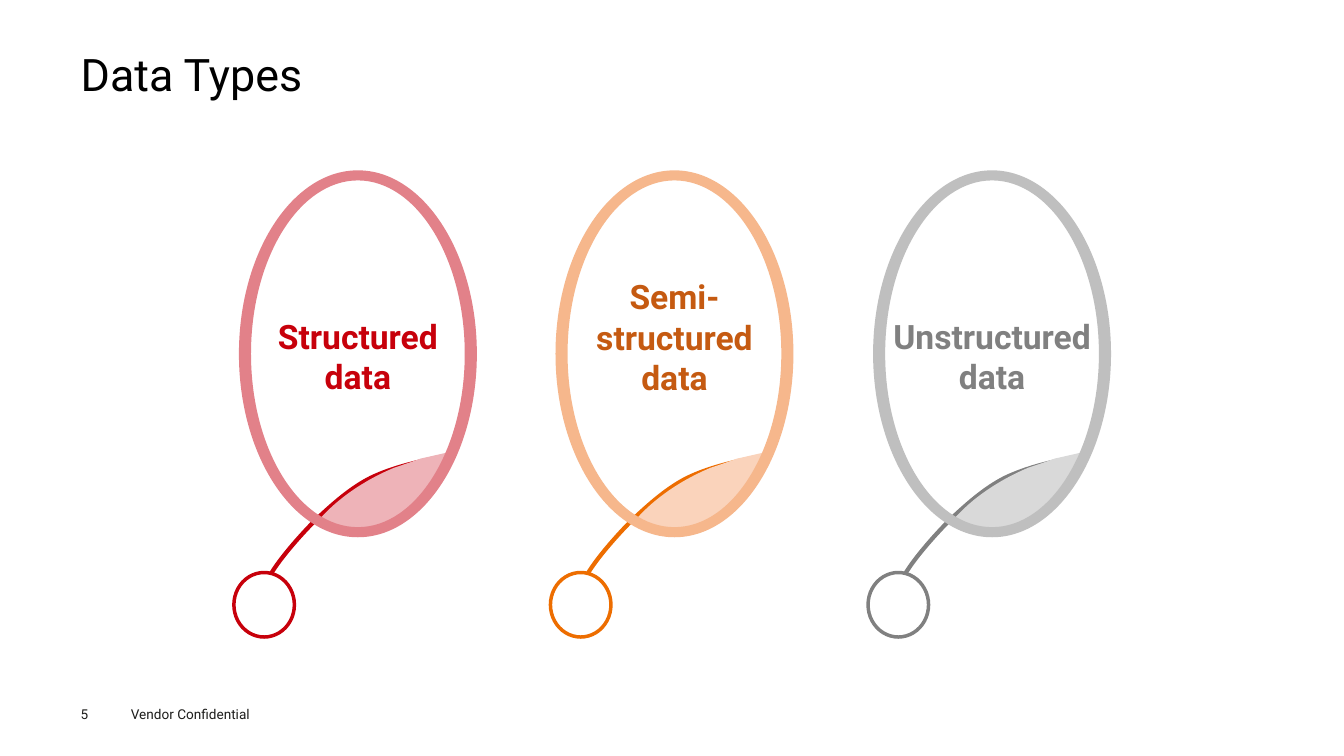
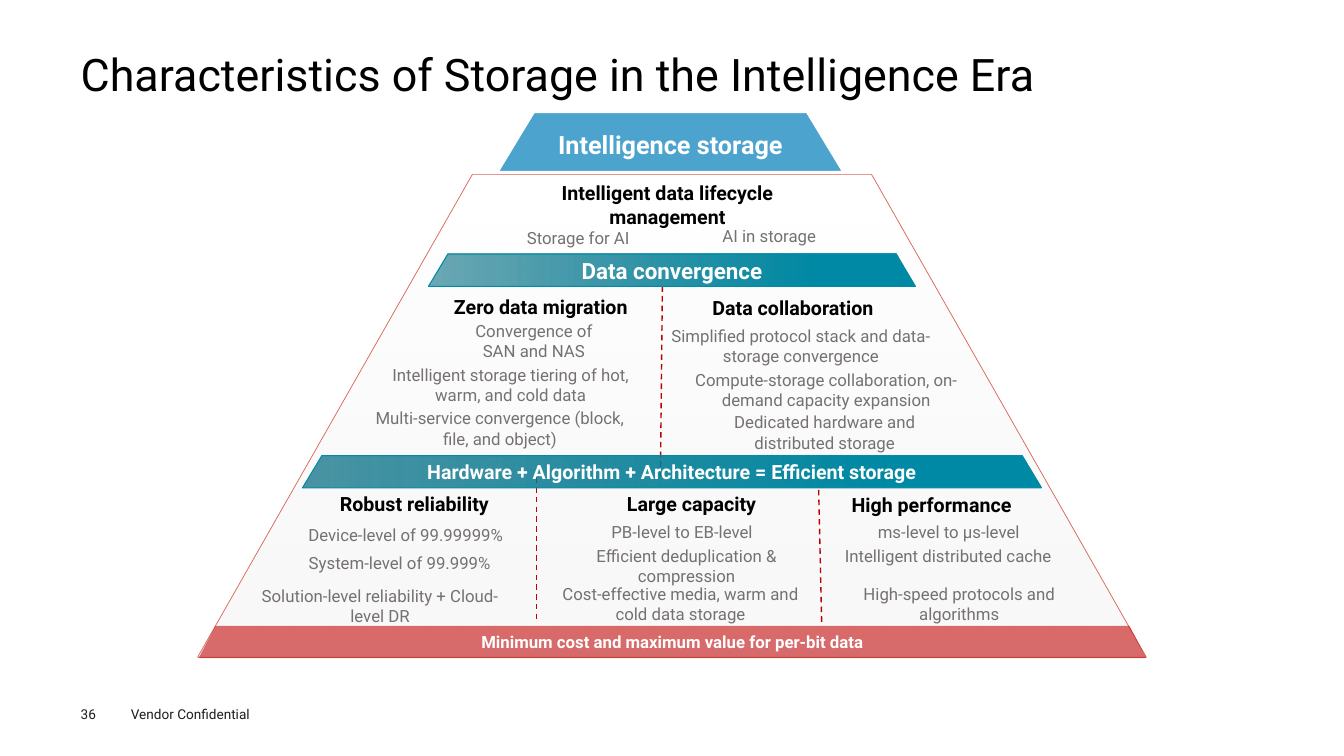
from pptx import Presentation
from pptx.dml.color import RGBColor
from pptx.enum.dml import MSO_LINE
from pptx.enum.shapes import MSO_CONNECTOR as Connector, MSO_SHAPE as Shape
from pptx.enum.text import MSO_ANCHOR as Anchor, MSO_AUTO_SIZE as AutoSize, PP_ALIGN as Align
from pptx.oxml import parse_xml
from pptx.oxml.ns import nsdecls, qn
from pptx.util import Inches, Pt

# Shared style
FONT = "Roboto"
BLACK, WHITE, FOOTER_INK = "000000", "FFFFFF", "1D1D1B"
DETAIL_GREY, DIVIDER_RED = "767171", "C00000"
TEAL, TEAL_DARK, TEAL_LINE = "008AA5", "006A7F", "008BA6"
TITLE_AREA = (0.8, 0.49, 11.73, 0.54)
FOOTER_TEXT = "Vendor Confidential"
NO_INSETS = (0, 0, 0, 0)
BOX_INSETS = (0.1, 0.05, 0.1, 0.05)
BAND_INSETS = (0.18, 0.09, 0.18, 0.09)

# Data type balloons: offset, label, label colour, ring, leaf, stalk, top inset
BALLOONS = [
    (0, "Structured data", "C7000B", "E28189", "EEB3B8", "C7000B", 0.44),
    (3.14, "Semi-structured data", "C55A11", "F6B78C", "FAD3BB", "ED6D00", 0.05),
    (6.29, "Unstructured data", "808080", "BFBFBF", "D9D9D9", "808080", 0.44),
]
# Outlines: a start, then segments of one point (line) or three (curve)
STALK = [(4.34, 4.54),
         [(4.11, 4.59), (3.89, 4.64), (3.68, 4.74)],
         [(3.48, 4.84), (3.3, 5), (3.13, 5.16)],
         [(2.97, 5.32), (2.78, 5.54), (2.69, 5.69)],
         [(2.61, 5.84), (2.62, 5.95), (2.64, 6.07)]]
LEAF = [(4.48, 4.48),
        [(4.45, 4.53)],
        [(4.32, 5), (3.77, 5.33), (3.53, 5.32)],
        [(3.38, 5.32), (3.3, 5.29), (3.19, 5.22)],
        [(3.14, 5.18)],
        [(3.18, 5.14)],
        [(3.35, 4.95), (3.6, 4.77), (3.91, 4.64)],
        [(4, 4.61), (4.09, 4.58), (4.17, 4.55)],
        [(4.22, 4.54), (4.43, 4.49), (4.48, 4.48)]]

# Pyramid texts: text, left, top, width
HEADINGS = [
    ("Intelligent data lifecycle management", 5.2, 1.75, 2.84),
    ("Zero data migration", 4.13, 2.88, 2.47),
    ("Data collaboration", 6.52, 2.89, 2.69),
    ("Robust reliability", 2.93, 4.83, 2.36),
    ("Large capacity", 5.58, 4.83, 2.56),
    ("High performance", 8.06, 4.84, 2.36),
]
DETAILS = [
    ("Storage for AI", 4.96, 2.21, 1.55),
    ("AI in storage", 6.89, 2.19, 1.48),
    ("Convergence of SAN and NAS", 4.49, 3.13, 1.61),
    ("Intelligent storage tiering of hot, warm, and cold data", 3.72, 3.57, 2.69),
    ("Multi-service convergence (block, file, and object)", 3.61, 4, 2.7),
    ("Simplified protocol stack and data-storage convergence", 6.51, 3.18, 2.87),
    ("Compute-storage collaboration, on-demand capacity expansion", 6.7, 3.62, 2.99),
    ("Dedicated hardware and distributed storage", 6.9, 4.04, 2.56),
    ("Device-level of 99.99999%", 2.71, 5.16, 2.63),
    ("System-level of 99.999%", 2.73, 5.43, 2.47),
    ("Solution-level reliability + Cloud-level DR", 2.39, 5.76, 2.76),
    ("PB-level to EB-level", 5.73, 5.13, 2.07),
    ("Efficient deduplication & compression", 5.69, 5.36, 2.24),
    ("Cost-effective media, warm and cold data storage", 5.4, 5.74, 2.7),
    ("ms-level to µs-level", 8.45, 5.13, 1.92),
    ("Intelligent distributed cache", 8.24, 5.36, 2.33),
    ("High-speed protocols and algorithms", 8.45, 5.74, 2.13),
]
DIVIDERS = [(8.12, 4.86, 8.15, 6.2), (5.32, 4.64, 5.32, 6.17), (6.57, 2.84, 6.55, 4.73)]


# Formatting helpers
def rgb(value):
    return RGBColor.from_string(value)


def inches(values):
    return [Inches(value) for value in values]


def set_values(target, values):
    for name, value in values.items():
        setattr(target, name, value)


def write(frame, text, size, color, bold=False, align=Align.LEFT,
          anchor=Anchor.TOP, insets=BOX_INSETS):
    left, top, right, bottom = inches(insets)
    set_values(frame, {
        "word_wrap": True, "auto_size": AutoSize.NONE, "vertical_anchor": anchor,
        "margin_left": left, "margin_top": top,
        "margin_right": right, "margin_bottom": bottom})
    para = frame.paragraphs[0]
    para.alignment = align
    span = para.add_run()
    span.text = text
    set_values(span.font, {"name": FONT, "size": Pt(size), "bold": bold})
    span.font.color.rgb = rgb(color)
    return para


def style(shape, fill=None, line=None, width=1):
    shape.shadow.inherit = False
    if fill:
        shape.fill.solid()
        shape.fill.fore_color.rgb = rgb(fill)
    else:
        shape.fill.background()
    if line:
        shape.line.color.rgb = rgb(line)
        shape.line.width = Pt(width)
    else:
        shape.line.fill.background()


def color_xml(color, alpha):
    return f'<a:srgbClr val="{color}"><a:alpha val="{alpha * 1000}"/></a:srgbClr>'


def replace_fill(shape, xml):
    properties = shape._element.spPr
    properties.replace(properties.find(qn("a:noFill")), parse_xml(xml))


def fill_transparent(shape, color, alpha):
    replace_fill(shape, f'<a:solidFill {nsdecls("a")}>{color_xml(color, alpha)}</a:solidFill>')


def fill_gradient(shape, stops, angle):
    stop_xml = "".join(f'<a:gs pos="{place * 1000}">{color_xml(color, alpha)}</a:gs>'
                       for place, color, alpha in stops)
    replace_fill(shape, f'<a:gradFill {nsdecls("a")} rotWithShape="1"><a:gsLst>{stop_xml}</a:gsLst>'
                        f'<a:lin ang="{angle * 60000}" scaled="0"/></a:gradFill>')


# Outlines
def ellipse(radius_x, radius_y, direction=1):
    """Four quarter curves, from the top; direction -1 runs the other way."""
    bend = 0.55
    units = [[(bend, -1), (1, -bend), (1, 0)], [(1, bend), (bend, 1), (0, 1)],
             [(-bend, 1), (-1, bend), (-1, 0)], [(-1, -bend), (-bend, -1), (0, -1)]]
    center_x, center_y = 3.55, 3.51
    quarters = [[(center_x + direction * radius_x * x, center_y + radius_y * y) for x, y in quarter]
                for quarter in units]
    return [(center_x, center_y - radius_y), *quarters]


def bend_segments(shape, contours):
    """Turn each three-point segment into one Bezier curve."""
    lines = iter(shape._element.findall(".//" + qn("a:lnTo")))
    for contour in contours:
        for segment in contour[1:]:
            corners = [next(lines) for _ in segment]
            if len(corners) == 1:
                continue
            curve = parse_xml(f'<a:cubicBezTo {nsdecls("a")}/>')
            corners[0].addprevious(curve)
            for corner in corners:
                curve.append(corner[0])
                corner.getparent().remove(corner)


def add_outline(page, contours, offset, close=True):
    builder = None
    for start, *segments in contours:
        points = [start] + [point for segment in segments for point in segment]
        first, *rest = [(Inches(x + offset), Inches(y)) for x, y in points]
        if builder is None:
            builder = page.shapes.build_freeform(*first, scale=1.0)
        else:
            builder.move_to(*first)
        builder.add_line_segments(rest, close=close)
    shape = builder.convert_to_shape()
    bend_segments(shape, contours)
    return shape


# Slide elements
def add_text(page, area, text, size, color, **options):
    box = page.shapes.add_textbox(*inches(area))
    write(box.text_frame, text, size, color, **options)


def add_page(deck, title, number):
    page = deck.slides.add_slide(deck.slide_layouts[5])
    heading = page.shapes.title
    set_values(heading, dict(zip(("left", "top", "width", "height"), inches(TITLE_AREA))))
    para = write(heading.text_frame, title, 32, BLACK, anchor=Anchor.MIDDLE, insets=NO_INSETS)
    para.line_spacing = 0.9
    add_text(page, (1.2, 6.95, 1.6, 0.27), FOOTER_TEXT, 9.7, FOOTER_INK)
    add_text(page, (0.8, 7, 0.55, 0.16), number, 9.7, FOOTER_INK, insets=NO_INSETS)
    return page


def add_balloon(page, offset, label, label_color, ring_color, leaf_color, stalk_color, top_inset):
    stalk = add_outline(page, [STALK], offset, close=False)
    style(stalk, line=stalk_color, width=3)
    leaf = add_outline(page, [LEAF], offset)
    style(leaf, leaf_color)
    ring = add_outline(page, [ellipse(1.18, 1.82), ellipse(1.06, 1.72, -1)], offset)
    style(ring, ring_color)
    write(ring.text_frame, label, 24, label_color, bold=True, align=Align.CENTER,
          anchor=Anchor.MIDDLE, insets=(0.1, top_inset, 0.1, 0.39))
    knob = page.shapes.add_shape(Shape.OVAL, *inches((2.32 + offset, 5.68, 0.6, 0.64)))
    style(knob, WHITE, stalk_color, 2.5)


def add_trapezoid(page, area, slant, line=None, width=1, text=None, size=12, insets=BAND_INSETS):
    shape = page.shapes.add_shape(Shape.TRAPEZOID, *inches(area))
    shape.adjustments[0] = slant
    style(shape, line=line, width=width)
    if text:
        write(shape.text_frame, text, size, WHITE, bold=True, align=Align.CENTER,
              anchor=Anchor.MIDDLE, insets=insets)
    return shape


def add_teal_band(page, area, text, size, alpha):
    band = add_trapezoid(page, area, 0.604, TEAL_LINE, 0.75, text, size)
    fill_gradient(band, [(0, TEAL_DARK, alpha), (80, TEAL, 100), (100, TEAL, 100)], 0)


def add_divider(page, ends):
    divider = page.shapes.add_connector(Connector.STRAIGHT, *inches(ends))
    divider.line.color.rgb = rgb(DIVIDER_RED)
    set_values(divider.line, {"width": Pt(1), "dash_style": MSO_LINE.DASH})
    divider._element.spPr.append(parse_xml(f'<a:effectLst {nsdecls("a")}/>'))


# Slides
def build_data_types(deck):
    page = add_page(deck, "Data Types", "5")
    for balloon in BALLOONS:
        add_balloon(page, *balloon)


def build_storage_pyramid(deck):
    page = add_page(deck, "Characteristics of Storage in the Intelligence Era", "36")
    frame = add_trapezoid(page, (1.96, 1.73, 9.41, 4.79), 0.569, "D86356", 0.5)
    fill_gradient(frame, [(0, "808080", 6), (100, "35363F", 0)], 270)
    cap = add_trapezoid(page, (4.93, 1.11, 3.44, 0.6), 0.605, WHITE, 2,
                        "Intelligence storage", 18, (0.16, 0.15, 0.16, 0.15))
    fill_transparent(cap, "007DB8", 70)
    for ends in DIVIDERS:
        add_divider(page, ends)
    for text, left, top, width in HEADINGS:
        add_text(page, (left, top, width, 0.36), text, 14, BLACK, bold=True, align=Align.CENTER)
    for text, left, top, width in DETAILS:
        add_text(page, (left, top, width, 0.29), text, 12, DETAIL_GREY, align=Align.CENTER)
    base = add_trapezoid(page, (1.97, 6.21, 9.4, 0.32), 0.525,
                         text="Minimum cost and maximum value for per-bit data")
    fill_transparent(base, "C00000", 57)
    add_teal_band(page, (4.25, 2.52, 4.83, 0.32), "Data convergence", 16, 57)
    add_teal_band(page, (3, 4.52, 7.33, 0.32),
                  "Hardware + Algorithm + Architecture = Efficient storage", 14, 70)


def main():
    deck = Presentation()
    set_values(deck, {"slide_width": Inches(13.33), "slide_height": Inches(7.5)})
    build_data_types(deck)
    build_storage_pyramid(deck)
    deck.save("out.pptx")


if __name__ == "__main__":
    main()
